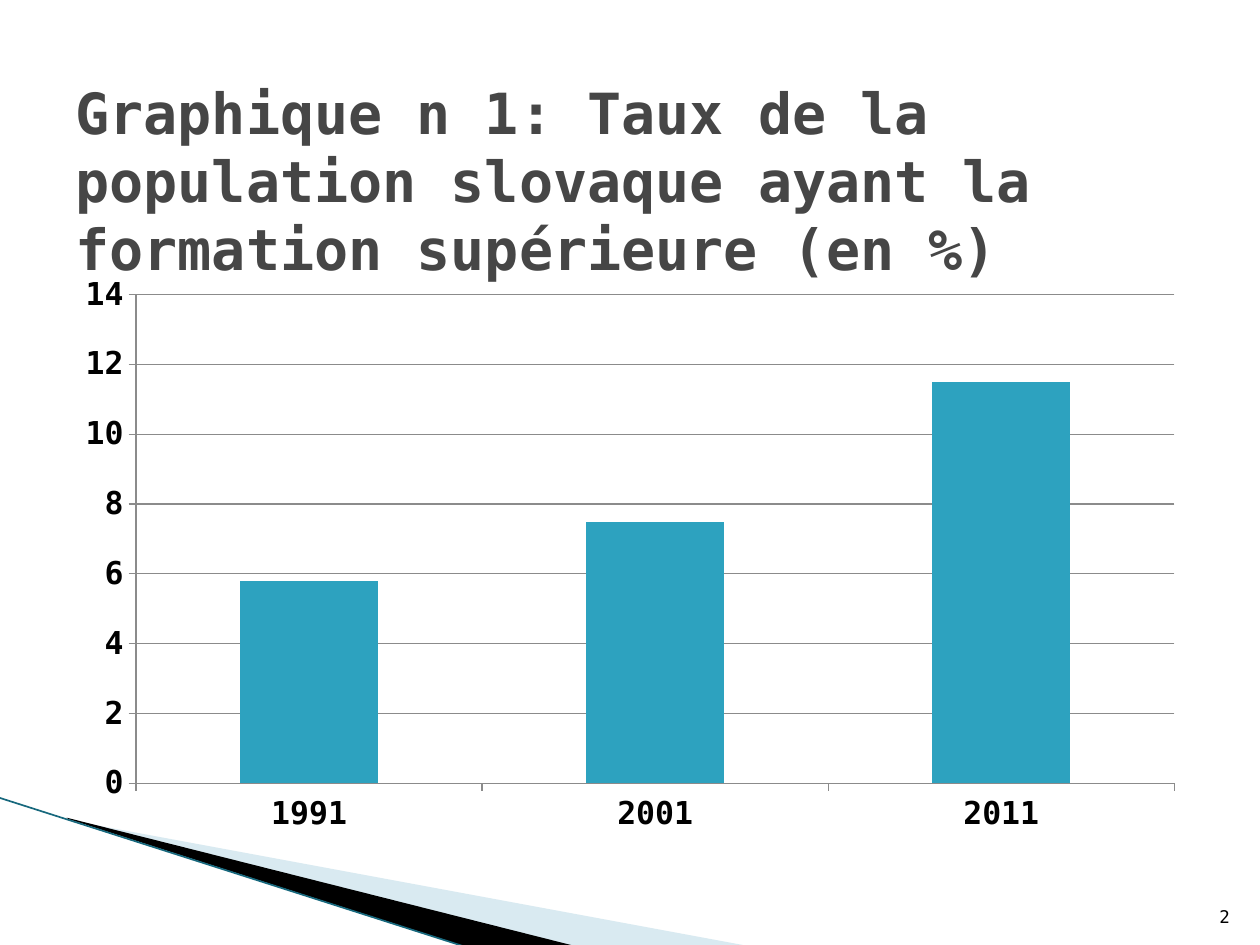
import pptx
import pptx.chart.data
import pptx.dml.color
import pptx.enum.chart
import pptx.enum.shapes
import pptx.enum.text
import pptx.oxml
import pptx.oxml.ns
import pptx.util
from pptx.util import Inches

FONT = "DejaVu Sans Mono"
BLACK, TITLE_GREY, AXIS_GREY = "000000", "464646", "8B8B8B"
TEAL, DARK_TEAL, PALE_BLUE = "2DA2BF", "17687D", "A0CBDC"


def color(hex_value):
    return pptx.dml.color.RGBColor.from_string(hex_value)


class SlideBuilder:
    def __init__(self, slide):
        self.slide = slide

    def style_font(self, font, size, hex_value, bold=False):
        font.name = FONT
        font.size = pptx.util.Pt(size)
        font.bold = bold
        font.color.rgb = color(hex_value)

    def add_wedge(self, points, hex_value, opacity=100):
        """Draw a filled polygon from points in inches; opacity is a percentage."""
        corners = [(Inches(x), Inches(y)) for x, y in points]
        builder = self.slide.shapes.build_freeform(*corners[0])
        builder.add_line_segments(corners[1:], close=True)
        shape = builder.convert_to_shape()
        shape.shadow.inherit = False
        shape.line.fill.background()
        shape.fill.solid()
        shape.fill.fore_color.rgb = color(hex_value)
        if opacity < 100:
            fill_color = shape._element.spPr.find(".//" + pptx.oxml.ns.qn("a:srgbClr"))
            alpha = pptx.oxml.parse_xml(
                f'<a:alpha {pptx.oxml.ns.nsdecls("a")} val="{opacity * 1000}"/>')
            fill_color.append(alpha)

    def add_line(self, start, end, hex_value, width):
        connector = self.slide.shapes.add_connector(
            pptx.enum.shapes.MSO_CONNECTOR.STRAIGHT,
            *(Inches(value) for value in start + end))
        connector.line.color.rgb = color(hex_value)
        connector.line.width = pptx.util.Pt(width)
        connector._element.spPr.append(
            pptx.oxml.parse_xml(f'<a:effectLst {pptx.oxml.ns.nsdecls("a")}/>'))

    def add_text(self, box, text, size, hex_value, bold=False, align="LEFT",
                 bottom_margin=0.05):
        shape = self.slide.shapes.add_textbox(*(Inches(value) for value in box))
        frame = shape.text_frame
        frame.word_wrap = True
        frame.vertical_anchor = pptx.enum.text.MSO_ANCHOR.BOTTOM
        frame.margin_bottom = Inches(bottom_margin)
        paragraph = frame.paragraphs[0]
        paragraph.alignment = pptx.enum.text.PP_ALIGN[align]
        run = paragraph.add_run()
        run.text = text
        self.style_font(run.font, size, hex_value, bold)

    def add_column_chart(self, box, categories, name, values):
        data = pptx.chart.data.CategoryChartData()
        data.categories = categories
        data.add_series(name, values)
        chart = self.slide.shapes.add_chart(
            pptx.enum.chart.XL_CHART_TYPE.COLUMN_CLUSTERED,
            *(Inches(value) for value in box), data).chart
        chart.has_legend = False
        chart.has_title = False
        self.style_font(chart.font, 10, BLACK)
        plot = chart.plots[0]
        plot.vary_by_categories = False
        plot.gap_width = 150
        fill = plot.series[0].format.fill
        fill.solid()
        fill.fore_color.rgb = color(TEAL)

        value_axis = chart.value_axis
        value_axis.minimum_scale, value_axis.maximum_scale = 0, 14
        value_axis.major_unit = 2
        value_axis.has_major_gridlines = True
        for axis in (chart.category_axis, value_axis):
            axis.major_tick_mark = pptx.enum.chart.XL_TICK_MARK.OUTSIDE
            self.style_font(axis.tick_labels.font, 18, BLACK, bold=True)
            axis.format.line.color.rgb = color(AXIS_GREY)
        value_axis.major_gridlines.format.line.color.rgb = color(AXIS_GREY)


def main():
    presentation = pptx.Presentation()
    presentation.slide_width = Inches(10)
    presentation.slide_height = Inches(7.5)
    builder = SlideBuilder(presentation.slides.add_slide(presentation.slide_layouts[6]))

    builder.add_wedge([(0.55, 6.51), (5.95, 7.51), (4.56, 7.51), (0.55, 6.5)],
                      PALE_BLUE, opacity=40)
    builder.add_wedge([(0.53, 6.49), (4.57, 7.51), (3.72, 7.52), (0.54, 6.5)], BLACK)
    builder.add_line((-0.01, 6.33), (3.71, 7.52), DARK_TEAL, 0.95)

    builder.add_column_chart((0.5, 2.1, 9, 4.6), ["1991", "2001", "2011"],
                             "Series 1", [5.8, 7.5, 11.5])
    builder.add_text(
        (0.5, 1.07, 9, 1.34),
        "Graphique n 1: Taux de la population slovaque ayant la formation supérieure (en %)",
        32.4, TITLE_GREY, bold=True, bottom_margin=0.17)
    builder.add_text((9.46, 7.01, 0.4, 0.4), "2", 10, BLACK, align="RIGHT")

    presentation.save("out.pptx")


if __name__ == "__main__":
    main()
